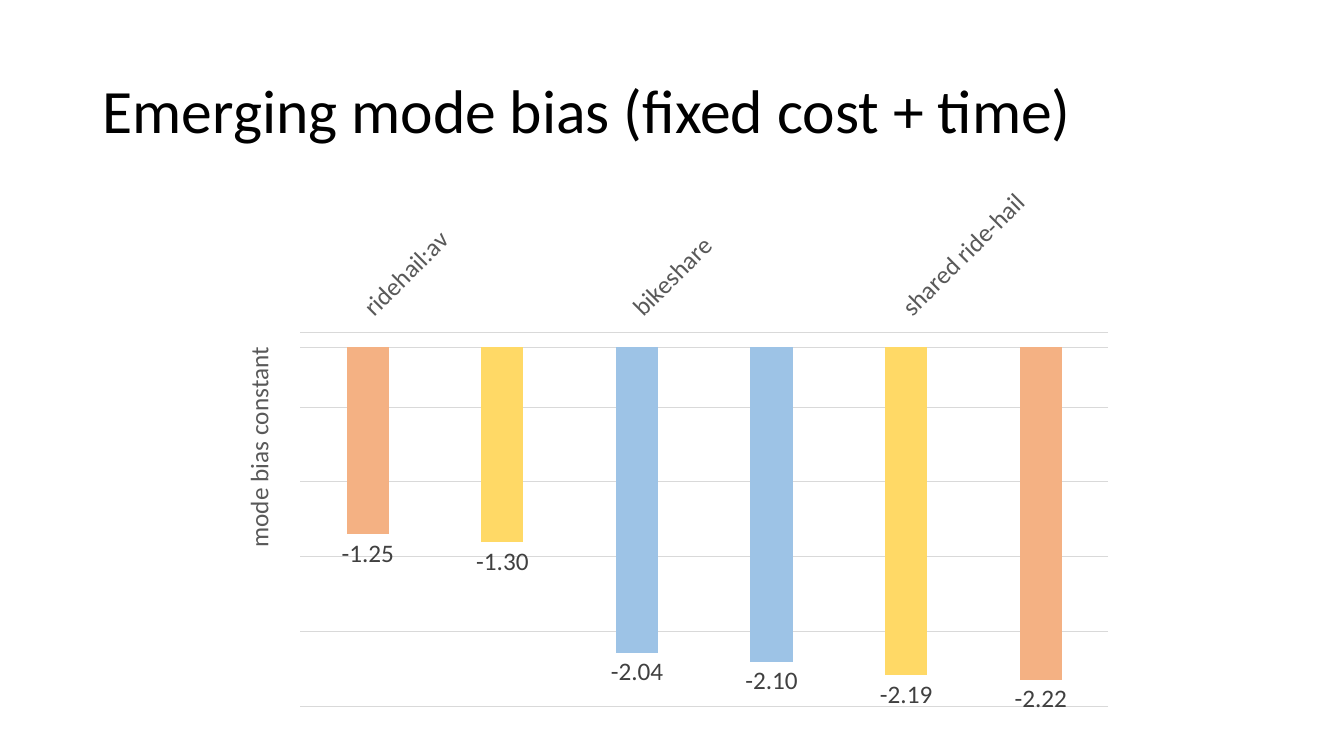
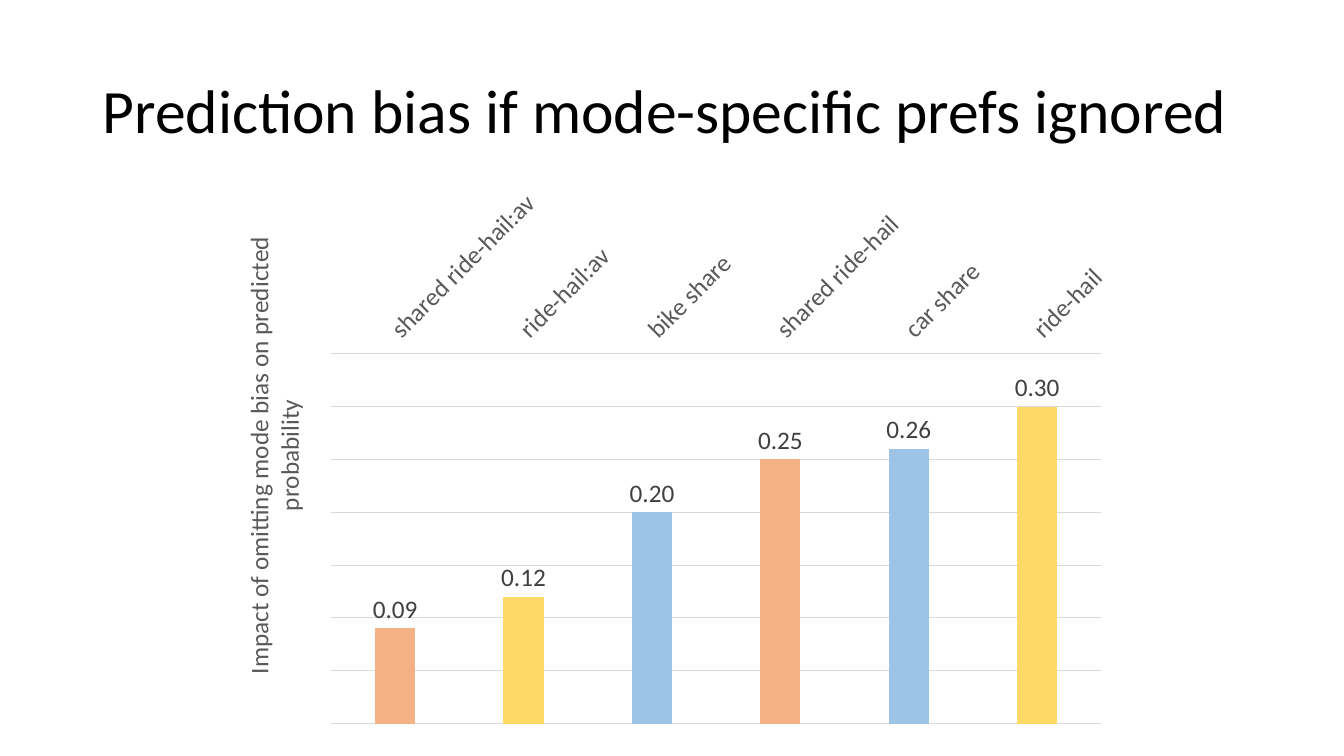
"""Build two slides with column charts on mode bias."""
from pptx import Presentation
from pptx.chart.data import CategoryChartData
from pptx.dml.color import RGBColor
from pptx.enum.chart import XL_CHART_TYPE, XL_LABEL_POSITION, XL_TICK_LABEL_POSITION, XL_TICK_MARK
from pptx.enum.text import MSO_ANCHOR
from pptx.oxml import parse_xml
from pptx.oxml.ns import nsdecls
from pptx.util import Inches, Pt

COLUMN = XL_CHART_TYPE.COLUMN_CLUSTERED
OUTSIDE = XL_LABEL_POSITION.OUTSIDE_END
HIGH = XL_TICK_LABEL_POSITION.HIGH
NO_TICK = XL_TICK_MARK.NONE
MIDDLE = MSO_ANCHOR.MIDDLE

FONT = "Calibri"
BLACK, GREY, DARK, RULE = "000000", "595959", "404040", "D9D9D9"
ORANGE, YELLOW, BLUE = "F4B183", "FFD966", "9DC3E6"

SLIDES = [
    {
        "title": "Emerging mode bias (fixed cost + time)",
        "axis": "mode bias constant",
        "height": 5.37,
        "scale": (-2.4, 0.1, 0.5),
        "label_step": 2,
        "bars": [
            ("ridehail:av", -1.25, ORANGE),
            ("shared ride-hail:av", -1.3, YELLOW),
            ("bikeshare", -2.04, BLUE),
            ("carshare", -2.1, BLUE),
            ("shared ride-hail", -2.19, YELLOW),
            ("ridehail", -2.22, ORANGE),
        ],
    },
    {
        "title": "Prediction bias if mode-specific prefs ignored",
        "axis": "Impact of omitting mode bias on predicted probability",
        "height": 5.54,
        "scale": (0, 0.35, 0.05),
        "label_step": 1,
        "bars": [
            ("shared ride-hail:av", 0.09, ORANGE),
            ("ride-hail:av", 0.12, YELLOW),
            ("bike share", 0.2, BLUE),
            ("shared ride-hail", 0.25, ORANGE),
            ("car share", 0.26, BLUE),
            ("ride-hail", 0.3, YELLOW),
        ],
    },
]


def rgb(value):
    return RGBColor.from_string(value)


def set_font(font, size, color):
    font.name = FONT
    font.size = Pt(size)
    font.bold = False
    font.color.rgb = rgb(color)


prs = Presentation()
prs.slide_width = Inches(13.33)
prs.slide_height = Inches(7.5)

for content in SLIDES:
    s = prs.slides.add_slide(prs.slide_layouts[6])

    tf = s.shapes.add_textbox(Inches(0.92), Inches(0.4), Inches(11.5), Inches(1.45)).text_frame
    tf.word_wrap = True
    tf.vertical_anchor = MIDDLE
    p = tf.paragraphs[0]
    p.text = content["title"]
    p.line_spacing = 0.9
    set_font(p.font, 44, BLACK)

    names, values, colors = zip(*content["bars"])
    data = CategoryChartData(number_format="0.00")
    data.categories = names
    data.add_series("Series 1", values)
    chart = s.shapes.add_chart(
        COLUMN, Inches(2.17), Inches(1.75), Inches(9), Inches(content["height"]), data
    ).chart
    chart.has_title = False
    chart.has_legend = False
    set_font(chart.font, 10, BLACK)

    plot = chart.plots[0]
    plot.gap_width = 219
    plot.overlap = -27
    plot.vary_by_categories = False
    plot.has_data_labels = True
    labels = plot.data_labels
    labels.show_value = True
    labels.position = OUTSIDE
    labels.number_format = "0.00"
    labels.number_format_is_linked = False
    set_font(labels.font, 18, DARK)

    series = plot.series[0]
    series.invert_if_negative = False
    for i, color in enumerate(colors):
        fill = series.points[i].format.fill
        fill.solid()
        fill.fore_color.rgb = rgb(color)

    cat_axis, val_axis = chart.category_axis, chart.value_axis
    cat_axis.major_tick_mark = NO_TICK
    cat_axis.minor_tick_mark = NO_TICK
    cat_axis.tick_label_position = HIGH
    set_font(cat_axis.tick_labels.font, 18, GREY)
    val_axis.minimum_scale, val_axis.maximum_scale, val_axis.major_unit = content["scale"]
    val_axis.has_major_gridlines = True
    val_axis.visible = False
    for line in (cat_axis.format.line, val_axis.major_gridlines.format.line):
        line.color.rgb = rgb(RULE)
        line.width = Pt(0.75)

    tf = val_axis.axis_title.text_frame
    p = tf.paragraphs[0]
    p.text = content["axis"]
    set_font(p.font, 18, GREY)

    cat_xml, val_xml = cat_axis._element, val_axis._element
    for xml, query, angle in ((cat_xml, "c:txPr/a:bodyPr", -45), (val_xml, "c:title//a:bodyPr", -90)):
        body = xml.xpath(query)[0]
        body.set("rot", str(angle * 60000))
        body.set("vert", "horz")
    skip = parse_xml(f'<c:tickLblSkip {nsdecls("c")} val="{content["label_step"]}"/>')
    cat_xml.xpath("c:noMultiLvlLbl")[0].addprevious(skip)

prs.save("out.pptx")
